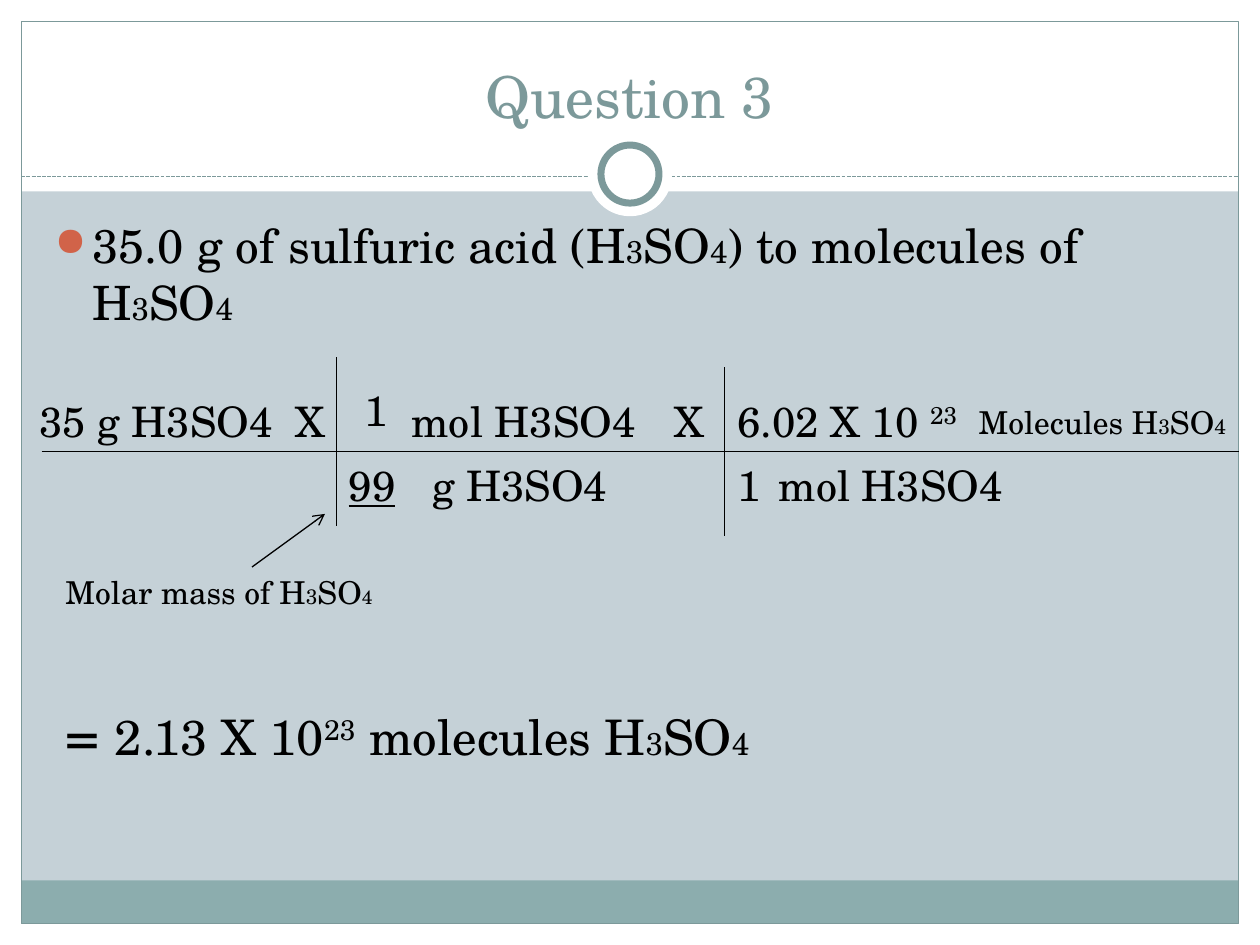
from lxml.etree import SubElement
from pptx import Presentation
from pptx.dml.color import RGBColor
from pptx.enum.dml import MSO_LINE_DASH_STYLE as Dash
from pptx.enum.shapes import MSO_CONNECTOR_TYPE as Connector, MSO_SHAPE as Shape
from pptx.enum.text import MSO_VERTICAL_ANCHOR as Anchor, PP_ALIGN as Align
from pptx.oxml.ns import qn
from pptx.util import Cm, Pt

FONT = "TeX Gyre Schola"
COLORS = {
    "background": "C5D1D7",
    "white": "FFFFFF",
    "footer": "8CADAE",
    "accent": "7C999A",
    "bullet": "D16349",
    "text": "000000",
}
WIDTH, HEIGHT = 25.4, 19.05


def color(name):
    return RGBColor.from_string(COLORS[name])


def add_shape(slide, kind, box, fill=None, line=None, line_width=0.75):
    shape = slide.shapes.add_shape(kind, *map(Cm, box))
    shape.shadow.inherit = False
    if fill:
        shape.fill.solid()
        shape.fill.fore_color.rgb = color(fill)
    else:
        shape.fill.background()
    if line:
        shape.line.color.rgb = color(line)
        shape.line.width = Pt(line_width)
    else:
        shape.line.fill.background()
    return shape


def add_line(slide, start, end, line="text", dash=None, arrow=False):
    connector = slide.shapes.add_connector(
        Connector.STRAIGHT, *map(Cm, (*start, *end)))
    connector.line.color.rgb = color(line)
    connector.line.width = Pt(0.75)
    if dash:
        connector.line.dash_style = dash
    if arrow:
        SubElement(connector.line._get_or_add_ln(), qn("a:tailEnd"), type="arrow")
    SubElement(connector._element.spPr, qn("a:effectLst"))


def add_text(slide, box, runs, fill="text", align=Align.LEFT, anchor=Anchor.TOP):
    """Place one paragraph; each run is (text, size) or (text, size, style)."""
    frame = slide.shapes.add_textbox(*map(Cm, box)).text_frame
    frame.word_wrap = True
    frame.vertical_anchor = anchor
    paragraph = frame.paragraphs[0]
    paragraph.alignment = align
    for text, size, *style in runs:
        run = paragraph.add_run()
        run.text = text
        run.font.name = FONT
        run.font.size = Pt(size)
        run.font.color.rgb = color(fill)
        if "underline" in style:
            run.font.underline = True
        if "superscript" in style:
            run._r.get_or_add_rPr().set("baseline", "30000")
    return paragraph


def acid_runs(before, size, small, last=None):
    """Text that ends in the formula, with its digits set smaller."""
    return [(before + "H", size), ("3", small), ("SO", size), ("4", last or small)]


def add_bullet(paragraph, indent):
    properties = paragraph._p.get_or_add_pPr()
    properties.set("marL", str(Cm(indent)))
    properties.set("indent", str(-Cm(indent)))
    bullet_color = SubElement(properties, qn("a:buClr"))
    SubElement(bullet_color, qn("a:srgbClr"), val=COLORS["bullet"])
    SubElement(properties, qn("a:buSzPct"), val="85000")
    SubElement(properties, qn("a:buChar"), char="●")


def draw_frame(slide, left, top, width, height):
    margin, header, footer = 0.43, 3.86, 0.87
    # White margins and header band
    for box in (
        (left, top + height - margin, width, margin),
        (left, top, width, header),
        (left, top, margin, height),
        (left + width - margin, top, margin, height),
    ):
        add_shape(slide, Shape.RECTANGLE, box, "white")
    # Footer band and outline
    inner_width = width - 2 * margin
    add_shape(slide, Shape.RECTANGLE,
              (left + margin, top + height - margin - footer, inner_width, footer),
              "footer")
    add_shape(slide, Shape.RECTANGLE,
              (left + margin, top + margin, inner_width, height - 2 * margin),
              line="accent")
    # Dashed rule with the ring on it
    rule = top + 3.56
    add_line(slide, (left + margin, rule), (left + width - margin, rule),
             "accent", Dash.SQUARE_DOT)
    center_x, center_y = left + width / 2, top + 3.51
    for diameter, line in ((1.7, None), (1.17, "accent")):
        add_shape(slide, Shape.OVAL,
                  (center_x - diameter / 2, center_y - diameter / 2,
                   diameter, diameter), "white", line, 4)


def draw_title(slide, left, top, width, height):
    add_text(slide, (left, top, width, height), [("Question 3", 33)],
             "accent", Align.CENTER, Anchor.BOTTOM)


def draw_problem(slide, left, top, width, height):
    runs = (acid_runs("35.0 g of sulfuric acid (", 27, 18)
            + acid_runs(") to molecules of ", 27, 18))
    add_bullet(add_text(slide, (left, top, width, height), runs), 0.76)


def draw_conversion(slide, left, top, width, height):
    bar, first, second = 1.9, 5.94, 13.77
    above, below = 0.65, 1.94
    # Fraction bar and factor separators
    add_line(slide, (left, top + bar), (left + width, top + bar))
    add_line(slide, (left + first, top), (left + first, top + height - 0.2))
    add_line(slide, (left + second, top + 0.2), (left + second, top + height))
    # Given amount, then numerators and denominators of both factors
    terms = (
        (-0.3, above, 5.3, [("35 g H3SO4", 24)]),
        (4.87, above, 1.27, [("X", 24)]),
        (6.25, 0.42, 1.7, [("1", 24)]),
        (7.21, above, 6.55, [("mol H3SO4", 24)]),
        (12.5, above, 1.27, [("X", 24)]),
        (first, below, 1.7, [("99", 24, "underline")]),
        (7.62, below, 6, [("g H3SO4", 24)]),
        (second, above, 5.28, [("6.02 X 10 ", 24), ("23", 24, "superscript")]),
        (18.64, 0.8, 5.72, acid_runs("Molecules ", 18, 12)),
        (second, below, 1.7, [("1", 24)]),
        (14.61, below, 6.55, [("mol H3SO4", 24)]),
    )
    for x, y, term_width, runs in terms:
        add_text(slide, (left + x, top + y, term_width, 1.27), runs)


def draw_molar_mass(slide, left, top, width, height):
    # Arrow from the note up to the denominator
    add_line(slide, (left + 4.01, top + 1.07), (left + 5.48, top), arrow=True)
    add_text(slide, (left, top + 1.07, width, height - 1.07),
             acid_runs("Molar mass of ", 18, 12, 11))


def draw_answer(slide, left, top, width, height):
    runs = [("= ", 32), ("2.13 X 10", 28), ("23", 28, "superscript")]
    add_text(slide, (left, top, width, height),
             runs + acid_runs(" molecules ", 28, 18))


def main():
    presentation = Presentation()
    presentation.slide_width, presentation.slide_height = Cm(WIDTH), Cm(HEIGHT)
    slide = presentation.slides.add_slide(presentation.slide_layouts[6])
    slide.background.fill.solid()
    slide.background.fill.fore_color.rgb = color("background")

    draw_frame(slide, 0, 0, WIDTH, HEIGHT)
    draw_title(slide, 0.85, 0.64, 23.7, 2.1)
    draw_problem(slide, 0.85, 4.23, 23.62, 12.7)
    draw_conversion(slide, 0.84, 7.2, 24.13, 3.6)
    draw_molar_mass(slide, 1.07, 10.36, 7.2, 2.09)
    draw_answer(slide, 1.07, 13.97, 17.65, 1.62)
    presentation.save("out.pptx")


if __name__ == "__main__":
    main()
